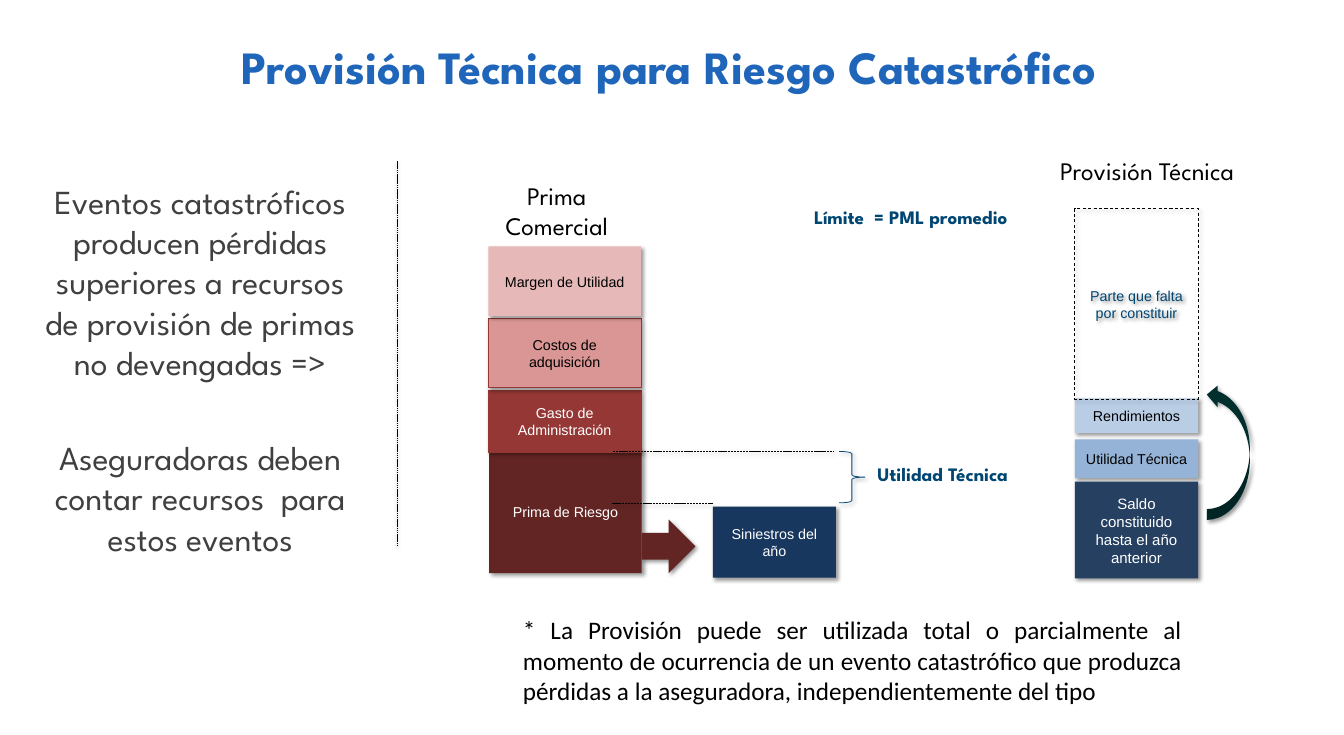
from dataclasses import dataclass

from lxml.etree import SubElement
from pptx import Presentation
from pptx.dml.color import RGBColor
from pptx.enum.dml import MSO_LINE_DASH_STYLE as Dash
from pptx.enum.shapes import MSO_CONNECTOR, MSO_SHAPE as Preset
from pptx.enum.text import MSO_ANCHOR as Anchor, MSO_AUTO_SIZE as AutoSize, PP_ALIGN as Align
from pptx.oxml.ns import qn
from pptx.util import Emu, Pt

PX = 9144  # one hundredth of an inch
COLORS = {
    "title": "1F66BA", "body": "404040", "black": "000000", "white": "FFFFFF",
    "navy": "004673", "maroon": "632523", "brick": "953735", "rose": "D99694",
    "pink": "E6B9B8", "claims": "17375E", "balance": "254061", "profit": "95B3D7",
    "yield": "B9CDE5", "curve": "002F2E",
}
HEADING = "League Spartan"


@dataclass(frozen=True)
class Box:
    left: int
    top: int
    width: int
    height: int

    def emu(self) -> list[Emu]:
        return [Emu(PX * side) for side in (self.left, self.top, self.width, self.height)]


@dataclass(frozen=True)
class Style:
    size: float
    color: str
    name: str = HEADING
    bold: bool = False
    align: Align = Align.CENTER


@dataclass(frozen=True)
class Shadow:
    alpha: int = 40
    blur: float = 4
    distance: float = 3
    angle: int = 45


@dataclass(frozen=True)
class Block:
    box: Box
    fill: str | None = None
    text: str = ""
    color: str = "black"
    size: float = 13.6
    line: str | None = None
    dash: Dash | None = None
    preset: Preset = Preset.RECTANGLE
    rotation: int = 0


@dataclass(frozen=True)
class Rule:
    start: tuple[int, int]
    end: tuple[int, int]
    width: float = 0.75
    shadow: Shadow = Shadow()


@dataclass(frozen=True)
class Label:
    box: Box
    text: str
    style: Style


BLOCKS = [
    Block(Box(647, 595, 202, 163), "maroon", "Prima de Riesgo", "white"),
    Block(Box(646, 516, 202, 82), "brick", "Gasto de Administración", "white", line="brick"),
    Block(Box(646, 421, 202, 92), "rose", "Costos de adquisición", line="brick"),
    Block(Box(646, 326, 202, 92), "pink", "Margen de Utilidad"),
    Block(Box(849, 687, 71, 71), "maroon", preset=Preset.RIGHT_ARROW),
    Block(Box(943, 670, 163, 94), "claims", "Siniestros del año", "white"),
    Block(Box(1110, 597, 34, 68), line="navy", preset=Preset.RIGHT_BRACE),
    Block(Box(1422, 581, 163, 51), "profit", "Utilidad Técnica"),
    Block(Box(1422, 527, 163, 46), "yield", "Rendimientos"),
    Block(Box(1422, 637, 163, 128), "balance", "Saldo constituido hasta el año anterior",
          "white", 14.3),
    Block(Box(1422, 276, 163, 252), None, "Parte que falta por constituir", "navy",
          line="black", dash=Dash.DASH),
    Block(Box(1535, 569, 180, 57), "curve", preset=Preset.CURVED_UP_ARROW, rotation=270),
]
RULES = [
    Rule((525, 213), (525, 722), 0.5, Shadow(38, 3.1, 1.6, 90)),
    Rule((810, 666), (943, 666)),
    Rule((811, 597), (1103, 597)),
]
CAPTION = Style(24, "black")
ACCENT = Style(18.1, "navy", bold=True, align=Align.LEFT)
LABELS = [
    Label(Box(1151, 607, 218, 41), "Utilidad Técnica", ACCENT),
    Label(Box(1067, 267, 458, 41), "Límite  = PML promedio", ACCENT),
    Label(Box(619, 233, 235, 91), "Prima Comercial", CAPTION),
    Label(Box(1308, 200, 419, 50), "Provisión Técnica", CAPTION),
    Label(Box(682, 808, 891, 131),
          "* La Provisión puede ser utilizada total o parcialmente al momento de ocurrencia "
          "de un evento catastrófico que produzca pérdidas a la aseguradora, "
          "independientemente del tipo",
          Style(24, "black", "Calibri", align=Align.JUSTIFY)),
]
BODY = [
    "Eventos catastróficos producen pérdidas superiores a recursos de provisión de primas "
    "no devengadas =>",
    "Aseguradoras deben contar recursos  para estos eventos",
]


def rgb(name: str) -> RGBColor:
    return RGBColor.from_string(COLORS[name])


def apply(target, values: dict) -> None:
    for key, value in values.items():
        setattr(target, key, value)


def write(shape, texts: list[str], style: Style, inset: tuple[int, int] = (10, 5),
          anchor: Anchor = Anchor.TOP, gap: float = 0) -> None:
    """Fill a shape with unbulleted paragraphs, gap points apart."""
    frame = shape.text_frame
    side, edge = (Emu(PX * margin) for margin in inset)
    apply(frame, {"word_wrap": True, "auto_size": AutoSize.NONE, "vertical_anchor": anchor,
                  "margin_left": side, "margin_right": side,
                  "margin_top": edge, "margin_bottom": edge})
    for index, text in enumerate(texts):
        para = frame.add_paragraph() if index else frame.paragraphs[0]
        props = para._p.get_or_add_pPr()
        props.set("marL", "0")
        props.set("indent", "0")
        SubElement(props, qn("a:buNone"))
        apply(para, {"alignment": style.align, "space_before": Pt(gap if index else 0)})
        span = para.add_run()
        span.text = text
        apply(span.font, {"size": Pt(style.size), "name": style.name, "bold": style.bold})
        span.font.color.rgb = rgb(style.color)


def cast_shadow(shape, shadow: Shadow) -> None:
    effects = SubElement(shape._element.spPr, qn("a:effectLst"))
    outer = SubElement(effects, qn("a:outerShdw"), blurRad=str(Pt(shadow.blur)),
                       dist=str(Pt(shadow.distance)), dir=str(shadow.angle * 60000),
                       algn="tl", rotWithShape="0")
    color = SubElement(outer, qn("a:srgbClr"), val=COLORS["black"])
    SubElement(color, qn("a:alpha"), val=str(shadow.alpha * 1000))


def draw_block(page, block: Block) -> None:
    shape = page.shapes.add_shape(block.preset, *block.box.emu())
    shape.rotation = block.rotation
    if block.fill:
        shape.fill.solid()
        shape.fill.fore_color.rgb = rgb(block.fill)
    else:
        shape.fill.background()
    if block.line:
        shape.line.color.rgb = rgb(block.line)
        apply(shape.line, {"width": Pt(0.75), "dash_style": block.dash})
    else:
        shape.line.fill.background()
    cast_shadow(shape, Shadow())
    if block.text:
        write(shape, [block.text], Style(block.size, block.color, "Arial"), (13, 6), Anchor.MIDDLE)


def draw_rule(page, rule: Rule) -> None:
    ends = [Emu(PX * place) for place in rule.start + rule.end]
    connector = page.shapes.add_connector(MSO_CONNECTOR.STRAIGHT, *ends)
    connector.line.color.rgb = rgb("black")
    apply(connector.line, {"width": Pt(rule.width), "dash_style": Dash.SQUARE_DOT})
    cast_shadow(connector, rule.shadow)


def draw_label(page, label: Label) -> None:
    write(page.shapes.add_textbox(*label.box.emu()), [label.text], label.style)


def place(holder, box: Box) -> None:
    apply(holder, dict(zip(("left", "top", "width", "height"), box.emu())))


def main() -> None:
    deck = Presentation()
    apply(deck, {"slide_width": Emu(PX * 1778), "slide_height": Emu(PX * 972)})
    page = deck.slides.add_slide(deck.slide_layouts[1])
    title, body = page.shapes.title, page.placeholders[1]
    place(title, Box(279, 29, 1214, 117))
    write(title, ["Provisión Técnica para Riesgo Catastrófico"],
          Style(44, "title", bold=True), (13, 6), Anchor.MIDDLE)
    place(body, Box(35, 231, 460, 644))
    write(body, BODY, Style(32, "body"), (16, 8), gap=52)
    for block in BLOCKS:
        draw_block(page, block)
    for rule in RULES:
        draw_rule(page, rule)
    for label in LABELS:
        draw_label(page, label)
    deck.save("out.pptx")


if __name__ == "__main__":
    main()
